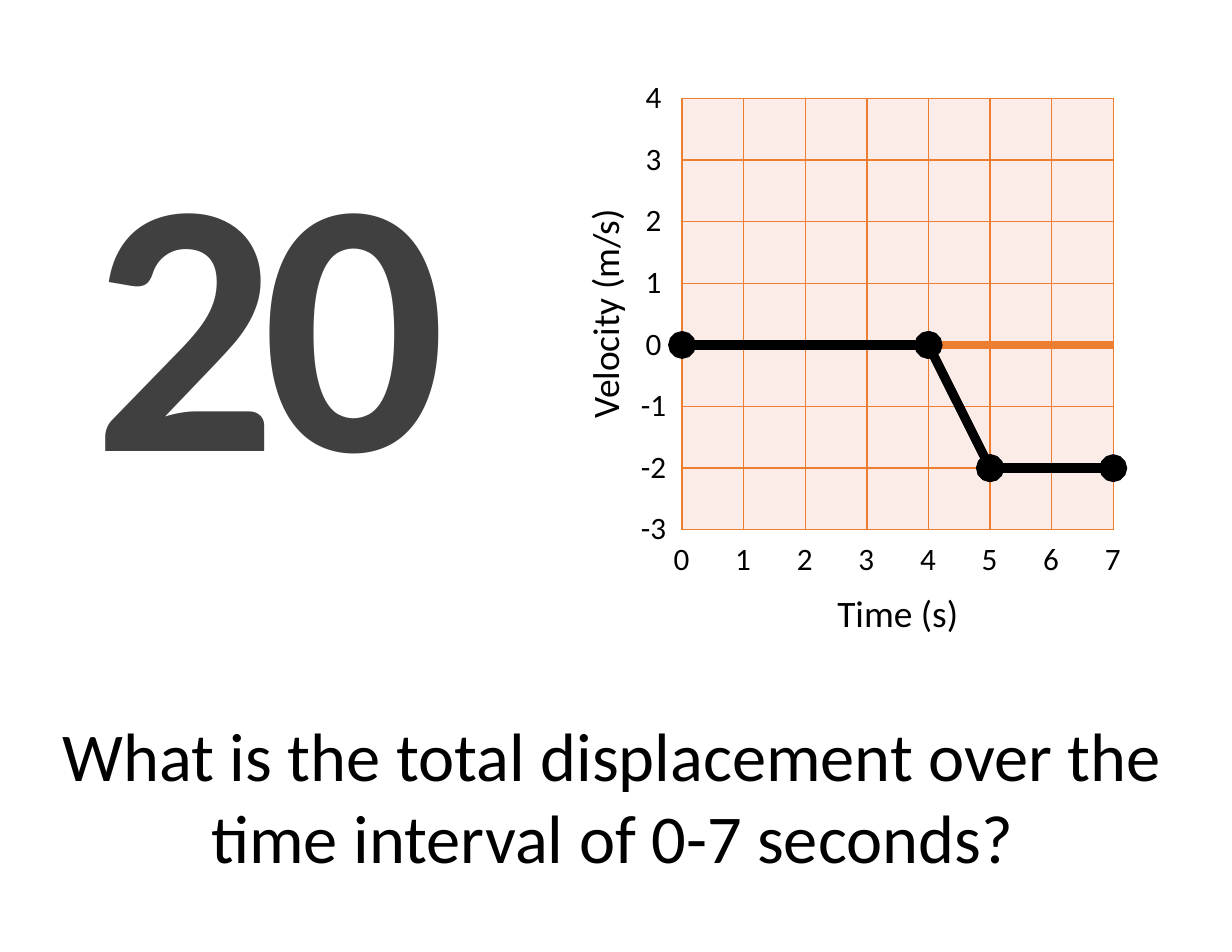
from pptx import Presentation
from pptx.dml.color import RGBColor as Rgb
from pptx.enum.shapes import MSO_CONNECTOR as Conn
from pptx.enum.text import MSO_ANCHOR as Anchor, PP_ALIGN as Align
from pptx.oxml.ns import qn
from pptx.util import Inches, Pt
from lxml.etree import SubElement as Sub

COLORS = {"ink": "000000", "gray": "404040", "grid": "ED7D31", "cell": "FCECE8"}
STEP = 0.55
COUNT = 7
LEFT, TOP = 6.09, 0.88
SIDE = STEP * COUNT
HIGH = 4
NO_STYLE = "{2D5ABB26-0587-4C30-8999-92F81FD0307C}"


def color(name):
    return Rgb.from_string(COLORS[name])


def apply(item, form):
    for key, value in form.items():
        setattr(item, key, value)


def write(frame, text, size, ink="ink", bold=False):
    apply(frame, {"word_wrap": True, "vertical_anchor": Anchor.MIDDLE})
    para = frame.paragraphs[0]
    para.alignment = Align.CENTER
    run = para.add_run()
    run.text = text
    apply(run.font, {"name": "Calibri", "size": Pt(size), "bold": bold})
    run.font.color.rgb = color(ink)
    return para


def add_text(slide, box, text, size, turn=0, **form):
    shape = slide.shapes.add_textbox(*map(Inches, box))
    shape.rotation = turn
    return write(shape.text_frame, text, size, **form)


def add_table(slide, left, top, rows, cols):
    box = map(Inches, (left, top, STEP * cols, STEP * rows))
    frame = slide.shapes.add_table(rows, cols, *box)
    table = frame.table
    apply(table, {"first_row": False, "horz_banding": False})
    next(frame.element.iter(qn("a:tableStyleId"))).text = NO_STYLE
    for col in table.columns:
        col.width = Inches(STEP)
    for row in table.rows:
        row.height = Inches(STEP)
    return table


def add_border(cell, edge, width):
    line = Sub(cell._tc.get_or_add_tcPr(), qn("a:ln" + edge), w=str(Pt(width)))
    fill = Sub(line, qn("a:solidFill"))
    Sub(fill, qn("a:srgbClr"), val=COLORS["grid"])


def add_grid(slide):
    table = add_table(slide, LEFT, TOP, COUNT, COUNT)
    thick = {(HIGH - 1, "B"), (HIGH, "T")}
    for num, row in enumerate(table.rows):
        for cell in row.cells:
            for edge in "LRTB":
                add_border(cell, edge, 6 if (num, edge) in thick else 1)
            cell.fill.solid()
            cell.fill.fore_color.rgb = color("cell")


def add_labels(slide, left, top, rows, cols, values):
    table = add_table(slide, left, top, rows, cols)
    for cell, value in zip(table.iter_cells(), values):
        write(cell.text_frame, str(value), 20)
        cell.vertical_anchor = Anchor.MIDDLE


def place(time, speed):
    return Inches(LEFT + time * STEP), Inches(TOP + (HIGH - speed) * STEP)


def add_line(slide, start, end):
    line = slide.shapes.add_connector(Conn.STRAIGHT, *place(*start), *place(*end))
    line.line.width = Pt(6)
    line.line.color.rgb = color("ink")
    stroke = line.line._get_or_add_ln()
    for tag in ("a:headEnd", "a:tailEnd"):
        Sub(stroke, qn(tag), type="oval")
    Sub(line.element.spPr, qn("a:effectLst"))


def main():
    deck = Presentation()
    apply(deck, {"slide_width": Inches(11), "slide_height": Inches(8.5)})
    slide = deck.slides.add_slide(deck.slide_layouts[6])

    add_text(slide, (0.44, 6.2, 10.06, 1.79),
             "What is the total displacement over the time interval of 0-7 seconds?", 44)
    score = add_text(slide, (0.55, 0.88, 3.72, 4.2), "20", 233, ink="gray", bold=True)
    score.line_spacing = 0.9
    score.runs[0].font._element.set("spc", "-1000")

    add_grid(slide)
    add_labels(slide, 5.81, 4.72, 1, COUNT + 1, range(COUNT + 1))
    add_labels(slide, 5.56, 0.6, COUNT + 1, 1, range(HIGH, HIGH - COUNT - 1, -1))
    add_text(slide, (LEFT, 5.22, SIDE, 0.5), "Time (s)", 24)
    add_text(slide, (3.47, 2.55, SIDE, 0.5), "Velocity (m/s)", 24, turn=270)

    points = [(0, 0), (4, 0), (5, -2), (7, -2)]
    for start, end in zip(points, points[1:]):
        add_line(slide, start, end)
    deck.save("out.pptx")


if __name__ == "__main__":
    main()
